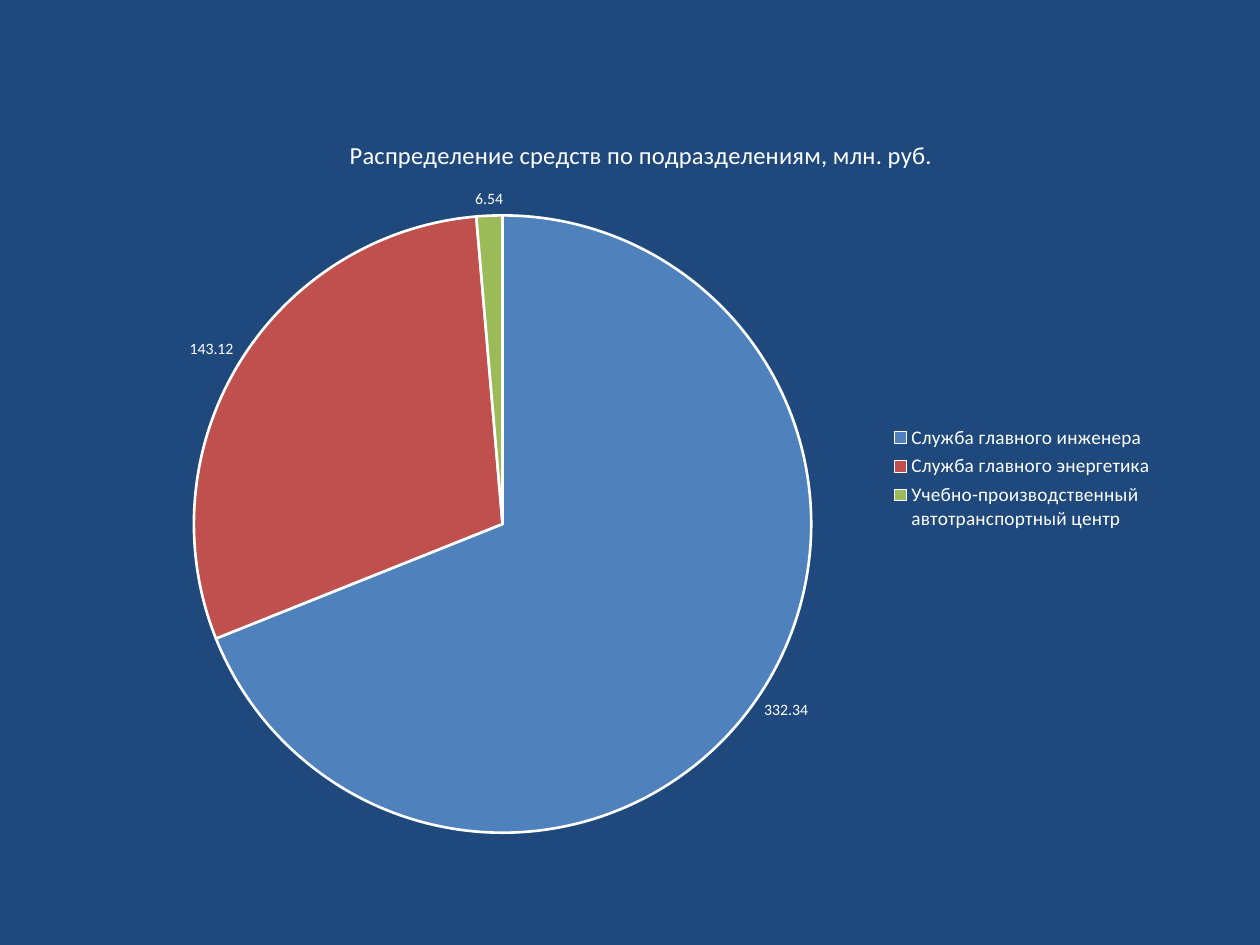
"""Build a slide with a pie chart of funds by department."""
from dataclasses import dataclass

from lxml.etree import SubElement
from pptx import Presentation
from pptx.chart.data import CategoryChartData
from pptx.dml.color import RGBColor as RGB
from pptx.enum.chart import XL_CHART_TYPE as ChartType
from pptx.enum.chart import XL_LABEL_POSITION as LabelPos
from pptx.enum.chart import XL_LEGEND_POSITION as LegendPos
from pptx.oxml.ns import qn
from pptx.util import Inches, Pt

TITLE = "Распределение средств по подразделениям, млн. руб."
DEPARTMENTS = [
    ("Служба главного инженера", 332.34, "4F81BD"),
    ("Служба главного энергетика", 143.12, "C0504D"),
    ("Учебно-производственный автотранспортный центр", 6.54, "9BBB59"),
]
CHART_BOX = (0.91, 0.84, 8.35, 5.91)
PIE_AT, PIE_SIZE = (1.54, 1.71), 4.9
TITLE_AT = (2.74, 1.06)


@dataclass(frozen=True)
class Theme:
    font: str = "Calibri"
    background: str = "1F497D"
    text: str = "FFFFFF"
    title: float = 14
    body: float = 10
    legend: float = 11
    label: float = 9
    outline: float = 1.5


THEME = Theme()


def style(font, size):
    font.name, font.size, font.bold = THEME.font, Pt(size), False
    font.color.rgb = RGB.from_string(THEME.text)


def place(parent, index, at, size=(), inner=False):
    for old in parent.findall(qn("c:layout")):
        parent.remove(old)
    layout = SubElement(parent, qn("c:layout"))
    parent.insert(index, layout)
    manual = SubElement(layout, qn("c:manualLayout"))
    left, top, width, height = CHART_BOX
    parts = [("layoutTarget", "inner")] if inner else []
    parts += [("xMode", "edge"), ("yMode", "edge")]
    parts += zip("xy", ((at[0] - left) / width, (at[1] - top) / height))
    if size:
        parts += zip("wh", (size[0] / width, size[1] / height))
    for tag, value in parts:
        text = value if isinstance(value, str) else f"{value:.4f}"
        SubElement(manual, qn(f"c:{tag}")).set("val", text)


def add_pie(s):
    data = CategoryChartData()
    data.categories = [name for name, _, _ in DEPARTMENTS]
    data.add_series("Series 1", [value for _, value, _ in DEPARTMENTS])
    box = map(Inches, CHART_BOX)
    chart = s.shapes.add_chart(ChartType.PIE, *box, data).chart
    style(chart.font, THEME.body)

    chart.has_title = True
    r = chart.chart_title.text_frame.paragraphs[0].add_run()
    r.text = TITLE
    style(r.font, THEME.title)
    title = chart._chartSpace.find(f".//{qn('c:title')}")
    place(title, 1, TITLE_AT)

    chart.has_legend = True
    chart.legend.position = LegendPos.RIGHT
    chart.legend.include_in_layout = False
    style(chart.legend.font, THEME.legend)

    plot = chart.plots[0]
    plot.vary_by_categories = True
    area = chart._chartSpace.find(f".//{qn('c:plotArea')}")
    place(area, 0, PIE_AT, (PIE_SIZE, PIE_SIZE), inner=True)

    series = plot.series[0]
    for i, (_, _, colour) in enumerate(DEPARTMENTS):
        fmt = series.points[i].format
        fmt.fill.solid()
        fmt.fill.fore_color.rgb = RGB.from_string(colour)
        fmt.line.color.rgb = RGB.from_string(THEME.text)
        fmt.line.width = Pt(THEME.outline)
    labels = series.data_labels
    labels.show_value = True
    labels.position = LabelPos.OUTSIDE_END
    style(labels.font, THEME.label)


def main():
    prs = Presentation()
    prs.slide_width, prs.slide_height = Inches(10), Inches(7.5)
    s = prs.slides.add_slide(prs.slide_layouts[6])
    s.background.fill.solid()
    s.background.fill.fore_color.rgb = RGB.from_string(THEME.background)
    add_pie(s)
    prs.save("out.pptx")


if __name__ == "__main__":
    main()
